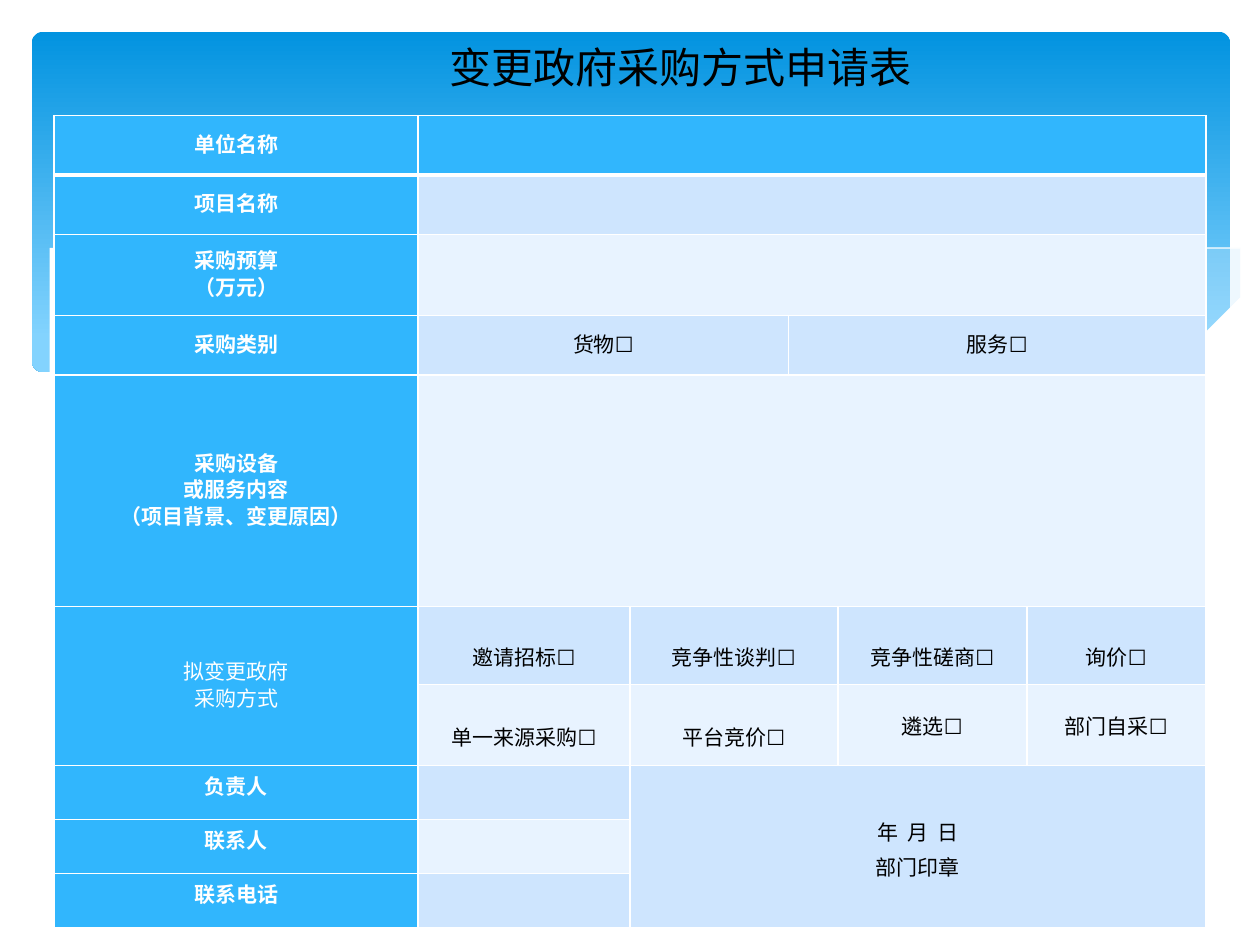
from pptx import Presentation, util as u
from pptx.dml.color import RGBColor
from pptx.enum import shapes, text
from pptx.oxml.ns import qn
from lxml import etree

WHITE = RGBColor(0xFF, 0xFF, 0xFF)
BLACK = RGBColor(0, 0, 0)
DEEP = RGBColor(0x02, 0x93, 0xE0)
SKY = RGBColor(0x83, 0xD3, 0xFE)
MIST = RGBColor(0xC6, 0xE7, 0xFC)
BLUE = RGBColor(0x31, 0xB6, 0xFD)
BANDS = RGBColor(0xE8, 0xF3, 0xFF), RGBColor(0xCE, 0xE5, 0xFE)

COLS = 7.34, 4.27, 3.2, 0.99, 3.81, 3.61
ROWS = 1.2, 1.2, 1.63, 1.2, 4.67, 1.57, 1.63, 1.09, 1.09, 1.09
# first row, first column, last row, last column
SPANS = [(0, 1, 0, 5), (1, 1, 1, 5), (2, 1, 2, 5), (3, 1, 3, 2), (3, 3, 3, 5),
         (4, 1, 4, 5), (5, 0, 6, 0), (5, 2, 5, 3), (6, 2, 6, 3), (7, 2, 9, 5)]

HEAD = dict(color=WHITE, bold=True, lead=15)
FOOT = dict(HEAD, lead=20)
PICK = dict(lead=30, gap=12)
CELLS = {
    (0, 0): ("单位名称", HEAD),
    (1, 0): ("项目名称", HEAD),
    (2, 0): ("采购预算\n（万元）", HEAD),
    (3, 0): ("采购类别", HEAD),
    (3, 1): ("货物☐", dict(lead=15)),
    (3, 3): ("服务☐", dict(lead=15)),
    (4, 0): ("采购设备\n或服务内容\n（项目背景、变更原因）", HEAD),
    (5, 0): ("拟变更政府\n采购方式", dict(HEAD, bold=False)),
    (5, 1): ("邀请招标☐", PICK),
    (5, 2): ("竞争性谈判☐", PICK),
    (5, 4): ("竞争性磋商☐", PICK),
    (5, 5): ("询价☐", PICK),
    (6, 1): ("单一来源采购☐", PICK),
    (6, 2): ("平台竞价☐", PICK),
    (6, 4): ("遴选☐", {}),
    (6, 5): ("部门自采☐", {}),
    (7, 0): ("负责人", FOOT),
    (7, 2): ("年  月  日\n部门印章", dict(lead=20)),
    (8, 0): ("联系人", FOOT),
    (9, 0): ("联系电话", FOOT),
}

TAIL = [(24.79, 5.08), (23.39, 5.33), (21.87, 5.66), (19.79, 6.15), (17.93, 6.53),
        (16.79, 6.73), (18.26, 6.91), (19.53, 7.04), (20.68, 7.06), (21.69, 7.01),
        (22.58, 6.91), (23.39, 6.73), (24.1, 6.53), (24.79, 6.27)]
SWELL = [(22.68, 6.93), (21.26, 6.73), (19.69, 6.45), (17.93, 6.1), (15.98, 5.64),
         (14.45, 5.28), (13.06, 5.03), (11.81, 4.85), (10.67, 4.75), (9.65, 4.7),
         (8.33, 4.75), (7.26, 4.85), (8.69, 5.05), (10.26, 5.36), (12.47, 5.89),
         (14.38, 6.3), (16.1, 6.63), (17.65, 6.86), (19, 7.01), (20.22, 7.06),
         (21.54, 7.04)]
CREST = [(7.85, 4.95), (8.97, 4.8), (10.57, 4.75), (12.42, 4.83), (14.12, 5),
         (16.15, 5.28), (18.47, 5.74), (21.11, 6.38), (23.04, 6.91)]
RISE = [(15.57, 6.53), (17.65, 5.97), (19.71, 5.49), (22, 5.05), (23.47, 4.83),
        (24.77, 4.7)]
SHORE = [(24.82, 6.25), (23.88, 6.58), (22.83, 6.83), (21.59, 6.98), (20.14, 7.01),
         (18.44, 6.91), (16.46, 6.65), (14.1, 6.22), (11.35, 5.59), (9.27, 5.13),
         (7.42, 4.83), (5.84, 4.7), (4.5, 4.67), (3.02, 4.75), (1.93, 4.95),
         (1.17, 5.16), (0.58, 5.41), (0.58, 8.36), (24.82, 8.36)]


def write(frame, words, size=12, font="Calibri", color=BLACK, bold=False,
          lead=None, gap=None):
    """Fill a text frame with centred lines, one paragraph each."""
    for i, line in enumerate(words.split("\n")):
        para = frame.add_paragraph() if i else frame.paragraphs[0]
        para.alignment = text.PP_ALIGN.CENTER
        if lead:
            para.line_spacing = u.Pt(lead)
        if gap:
            para.space_before = para.space_after = u.Pt(gap)
        run = para.add_run()
        run.text = line
        run.font.size, run.font.name, run.font.bold = u.Pt(size), font, bold
        run.font.color.rgb = color


def edge(cell, side, width):
    line = etree.SubElement(cell._tc.get_or_add_tcPr(), qn("a:ln" + side),
                            w=str(u.Pt(width)))
    fill = etree.SubElement(line, qn("a:solidFill"))
    etree.SubElement(fill, qn("a:srgbClr"), val=str(WHITE))


class Page:
    def __init__(self, slide):
        self.shapes = slide.shapes

    def banner(self, x, y, w, h):
        box = self.shapes.add_shape(shapes.MSO_SHAPE.ROUNDED_RECTANGLE,
                                    u.Cm(x), u.Cm(y), u.Cm(w), u.Cm(h))
        box.adjustments[0] = 0.034
        box.shadow.inherit = False
        box.line.fill.background()
        box.fill.gradient()
        box.fill.gradient_angle = 270
        for stop, color, place in zip(box.fill.gradient_stops, (DEEP, SKY), (0, 0.9)):
            stop.color.rgb, stop.position = color, place

    def wave(self, points, color=None, alpha=100):
        """Draw a filled outline, or an open white hairline if no colour is given."""
        pen = self.shapes.build_freeform(*points[0], scale=u.Cm(1))
        pen.add_line_segments(points[1:], close=color is not None)
        form = pen.convert_to_shape()
        form.shadow.inherit = False
        if color is None:
            form.fill.background()
            form.line.color.rgb, form.line.width = WHITE, 0
            return
        form.line.fill.background()
        form.fill.solid()
        form.fill.fore_color.rgb = color
        if alpha < 100:
            tint = form._element.spPr.find(qn("a:solidFill"))[0]
            etree.SubElement(tint, qn("a:alpha"), val=str(alpha * 1000))

    def title(self, words, x, y, w, h):
        frame = self.shapes.add_textbox(u.Cm(x), u.Cm(y), u.Cm(w), u.Cm(h)).text_frame
        frame.word_wrap = True
        frame.auto_size = text.MSO_AUTO_SIZE.SHAPE_TO_FIT_TEXT
        frame.vertical_anchor = text.MSO_ANCHOR.MIDDLE
        write(frame, words, size=24, font="Arial")

    def form(self, x, y):
        grid = self.shapes.add_table(len(ROWS), len(COLS), u.Cm(x), u.Cm(y),
                                     u.Cm(sum(COLS)), u.Cm(sum(ROWS))).table
        for col, width in zip(grid.columns, COLS):
            col.width = u.Cm(width)
        for row, height in zip(grid.rows, ROWS):
            row.height = u.Cm(height)
        for top, left, low, right in SPANS:
            grid.cell(top, left).merge(grid.cell(low, right))
        for r in range(len(ROWS)):
            for c in range(len(COLS)):
                self.cell(grid.cell(r, c), r, c)

    def cell(self, cell, r, c):
        cell.margin_left = cell.margin_right = u.Cm(0.08)
        cell.margin_top = cell.margin_bottom = 0
        top_row = r < 7 or c > 0
        cell.vertical_anchor = text.MSO_ANCHOR.MIDDLE if top_row else text.MSO_ANCHOR.TOP
        for side in "LRTB":
            edge(cell, side, 3 if (r, side) in ((0, "B"), (1, "T")) else 1)
        cell.fill.solid()
        band = 1 if r == 7 and c > 1 else r % 2
        cell.fill.fore_color.rgb = BLUE if r == 0 or c == 0 else BANDS[band]
        if (r, c) in CELLS:
            words, style = CELLS[r, c]
            write(cell.text_frame, words, **style)


def main():
    deck = Presentation()
    deck.slide_width, deck.slide_height = u.Cm(25.4), u.Cm(19.05)
    page = Page(deck.slides.add_slide(deck.slide_layouts[6]))
    page.banner(0.64, 0.64, 24.16, 6.86)
    page.wave(TAIL, MIST, 29)
    page.wave(SWELL, MIST, 40)
    page.wave(CREST)
    page.wave(RISE)
    page.wave(SHORE, WHITE)
    page.form(1.09, 2.33)
    page.title("变更政府采购方式申请表", 5.11, 0.71, 17.2, 1.27)
    deck.save("out.pptx")


if __name__ == "__main__":
    main()
